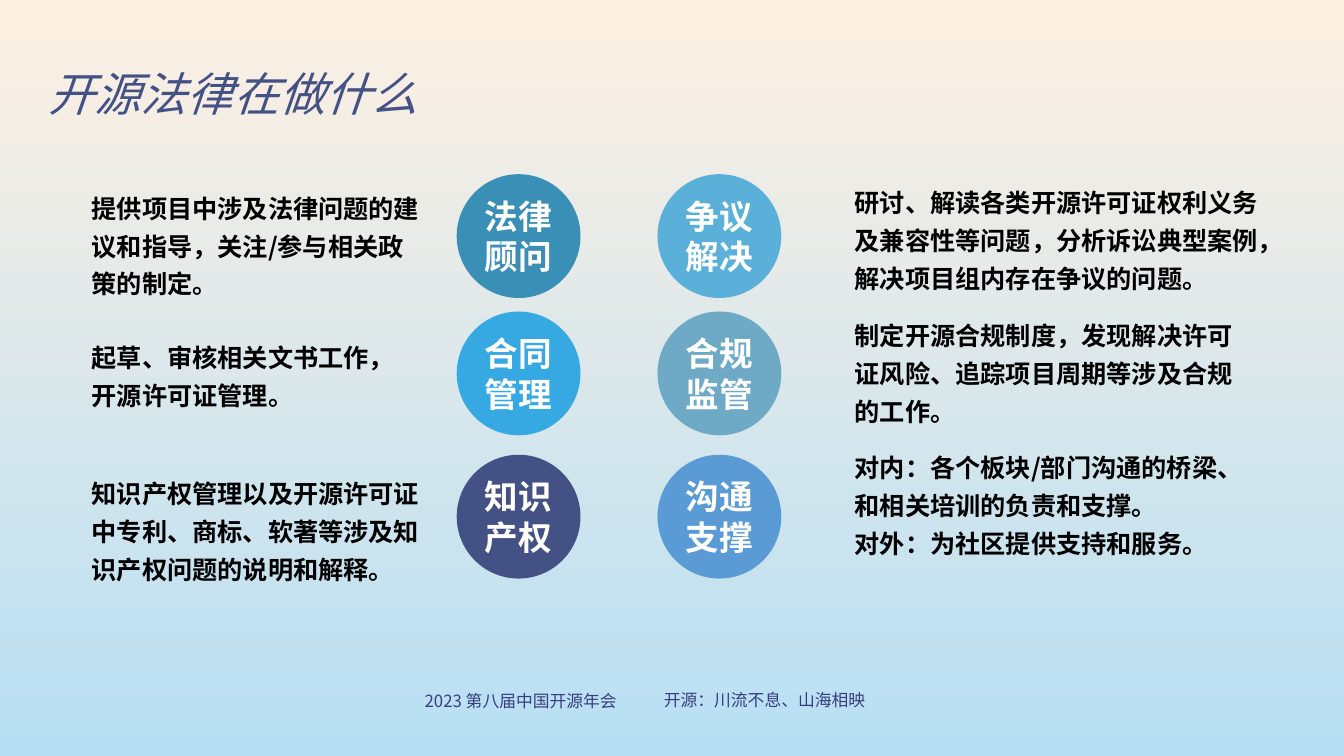
from lxml import etree
from pptx import Presentation
from pptx import util as u
from pptx.dml.color import RGBColor
from pptx.enum import shapes, text
from pptx.oxml.ns import qn

FONT = "Noto Sans CJK SC"
CREAM = RGBColor(0xFE, 0xF0, 0xE2)
SKY = RGBColor(0xB7, 0xDF, 0xF4)
FOOTER = RGBColor(0x36, 0x3E, 0x7D)
INDIGO = RGBColor(0x44, 0x51, 0x85)
TEAL = RGBColor(0x3A, 0x8F, 0xB7)
AZURE = RGBColor(0x36, 0xA9, 0xE3)
LIGHT_BLUE = RGBColor(0x5A, 0xB0, 0xD8)
GREY_BLUE = RGBColor(0x6E, 0xAA, 0xC6)
BLUE = RGBColor(0x5B, 0x9B, 0xD5)
BLACK = RGBColor(0, 0, 0)
WHITE = RGBColor(0xFF, 0xFF, 0xFF)

DIAMETER = 3.12
CIRCLE_TOPS = (4.39, 7.85, 11.46)

# Each duty: circle label, circle colour, text top, width, height, paragraphs
LEFT_DUTIES = [
    ("法律顾问", TEAL, 4.9, 8.86, 2.41,
     ["提供项目中涉及法律问题的建议和指导，关注/参与相关政策的制定。"]),
    ("合同管理", AZURE, 8.18, 8.48, 2.41,
     ["起草、审核相关文书工作，开源许可证管理。"]),
    ("知识产权", INDIGO, 12.01, 8.86, 2.57,
     ["知识产权管理以及开源许可证中专利、商标、软著等涉及知识产权问题的说明和解释。"]),
]
RIGHT_DUTIES = [
    ("争议解决", LIGHT_BLUE, 4.85, 11, 2.24,
     ["研讨、解读各类开源许可证权利义务及兼容性等问题，分析诉讼典型案例，解决项目组内存在争议的问题。"]),
    ("合规监管", GREY_BLUE, 7.9, 10.64, 2.84,
     ["制定开源合规制度，发现解决许可证风险、追踪项目周期等涉及合规的工作。"]),
    ("沟通支撑", BLUE, 11.35, 10.29, 2.57,
     ["对内：各个板块/部门沟通的桥梁、和相关培训的负责和支撑。",
      "对外：为社区提供支持和服务。"]),
]


class Deck:
    def __init__(self, prs):
        self.font = FONT
        self.slide = prs.slides.add_slide(prs.slide_layouts[6])

    def background(self, top, bottom):
        fill = self.slide.background.fill
        fill.gradient()
        fill.gradient_angle = 270
        for stop, color in zip(fill.gradient_stops, (top, bottom)):
            stop.color.rgb = color

    def add_text(self, tf, paragraphs, size, color, bold=False, italic=False,
                 align=text.PP_ALIGN.LEFT, spacing=1.0):
        tf.word_wrap = True
        tf.vertical_anchor = text.MSO_ANCHOR.MIDDLE
        for i, words in enumerate(paragraphs):
            p = tf.paragraphs[0] if i == 0 else tf.add_paragraph()
            p.alignment = align
            p.line_spacing = spacing
            r = p.add_run()
            r.text = words
            r.font.size = u.Pt(size)
            r.font.bold = bold
            r.font.italic = italic
            r.font.color.rgb = color
            r.font.name = self.font
            ea = etree.SubElement(r.font._element, qn("a:ea"))
            ea.set("typeface", self.font)

    def textbox(self, left, top, width, height, paragraphs, size, color, **style):
        sp = self.slide.shapes.add_textbox(
            u.Cm(left), u.Cm(top), u.Cm(width), u.Cm(height))
        self.add_text(sp.text_frame, paragraphs, size, color, **style)

    def circle(self, left, top, label, color):
        sp = self.slide.shapes.add_shape(
            shapes.MSO_SHAPE.OVAL, u.Cm(left), u.Cm(top),
            u.Cm(DIAMETER), u.Cm(DIAMETER))
        sp.shadow.inherit = False
        sp.fill.solid()
        sp.fill.fore_color.rgb = color
        sp.line.fill.background()
        tf = sp.text_frame
        tf.margin_left = tf.margin_right = u.Cm(0.1)
        self.add_text(tf, [label], 24, WHITE, bold=True,
                      align=text.PP_ALIGN.CENTER)

    def duties(self, text_left, circle_left, rows):
        """Draw a column of circles with the explanations beside them."""
        for circle_top, row in zip(CIRCLE_TOPS, rows):
            label, color, top, width, height, paragraphs = row
            self.textbox(text_left, top, width, height, paragraphs, 18, BLACK,
                         bold=True, spacing=1.25)
            self.circle(circle_left, circle_top, label, color)


def main():
    prs = Presentation()
    prs.slide_width = u.Cm(33.87)
    prs.slide_height = u.Cm(19.05)
    deck = Deck(prs)
    deck.background(CREAM, SKY)
    deck.textbox(0.97, 1.07, 11.66, 2.72, ["开源法律在做什么"], 33, INDIGO,
                 italic=True, spacing=0.9)
    deck.duties(2.06, 11.51, LEFT_DUTIES)
    deck.duties(21.29, 16.57, RIGHT_DUTIES)
    deck.textbox(9.63, 17.27, 6.99, 0.76, ["2023 第八届中国开源年会"], 12, FOOTER,
                 align=text.PP_ALIGN.CENTER)
    deck.textbox(16.21, 17.25, 6.12, 0.76, ["开源：川流不息、山海相映"], 12, FOOTER,
                 align=text.PP_ALIGN.CENTER)
    prs.save("out.pptx")


if __name__ == "__main__":
    main()
